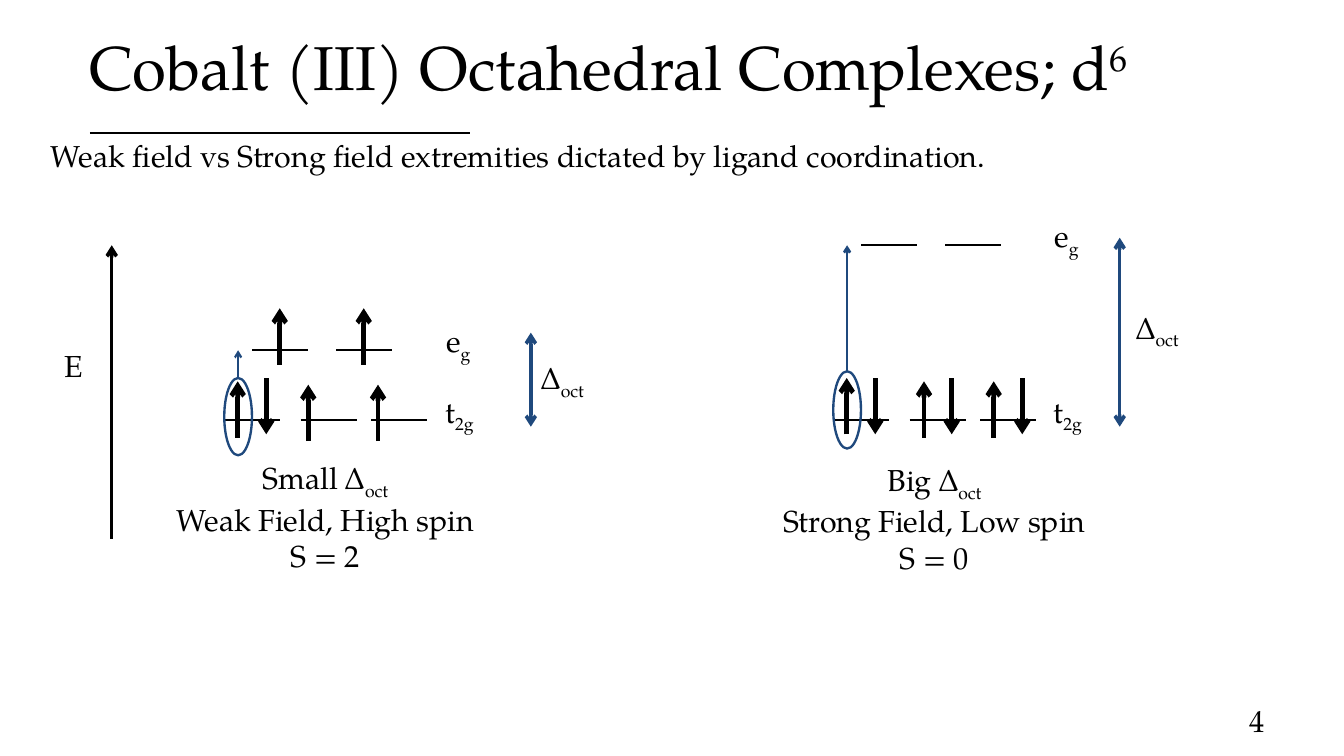
from lxml.etree import SubElement
from pptx import Presentation
from pptx.dml.color import RGBColor
from pptx.enum.shapes import MSO_CONNECTOR, MSO_SHAPE
from pptx.enum.text import MSO_ANCHOR, MSO_AUTO_SIZE, PP_ALIGN
from pptx.oxml.ns import qn
from pptx.util import Inches, Pt

COLORS = {"ink": "000000", "accent": "1F497D"}
FONT = "TeX Gyre Pagella"
BASELINES = {"_": "-25000", "^": "30000"}
ORBITAL_WIDTH = 0.665
SPIN_LENGTH = 0.67
T2G_LEVEL = 5


def write_text(frame, text, size=26, color="ink", align=PP_ALIGN.LEFT):
    """Fill a frame line by line; _ lowers and ^ raises the rest of a line."""
    for index, line in enumerate(text.split("\n")):
        para = frame.add_paragraph() if index else frame.paragraphs[0]
        para.alignment = align
        mark = next((sign for sign in BASELINES if sign in line), "_")
        body, _, script = line.partition(mark)
        for part, baseline in ((body, None), (script, BASELINES[mark])):
            if not part:
                continue
            span = para.add_run()
            span.text = part
            span.font.name = FONT
            span.font.size = Pt(size)
            span.font.color.rgb = RGBColor.from_string(COLORS[color])
            if baseline:
                span.font._element.set("baseline", baseline)


class OrbitalSlide:
    """Holds the page and draws each kind of element on it."""

    def __init__(self, deck):
        """Add a title-only page to the deck."""
        self.page = deck.slides.add_slide(deck.slide_layouts[5])

    def pad(self, frame):
        """Centre a frame vertically and widen its insets."""
        frame.vertical_anchor = MSO_ANCHOR.MIDDLE
        frame.margin_left = frame.margin_right = Inches(0.14)
        frame.margin_top = frame.margin_bottom = Inches(0.07)

    def title(self, text, left, top, width, height):
        """Place and format the title placeholder."""
        box = self.page.shapes.title
        box.left, box.top = Inches(left), Inches(top)
        box.width, box.height = Inches(width), Inches(height)
        frame = box.text_frame
        frame.auto_size = MSO_AUTO_SIZE.NONE
        self.pad(frame)
        write_text(frame, text, size=53)

    def text(self, text, left, top, width, height, wrap=True, **style):
        """Add a text box and return its frame."""
        box = self.page.shapes.add_textbox(
            Inches(left), Inches(top), Inches(width), Inches(height))
        frame = box.text_frame
        frame.word_wrap = wrap
        write_text(frame, text, **style)
        return frame

    def label(self, text, left, top, width):
        """Add a short centred label that does not wrap."""
        self.text(text, left, top, width, 0.54, wrap=False, align=PP_ALIGN.CENTER)

    def line(self, start, end, weight=2, color="ink", ends=()):
        """Add a straight line with arrowheads at the named ends."""
        link = self.page.shapes.add_connector(
            MSO_CONNECTOR.STRAIGHT, *(Inches(value) for value in (*start, *end)))
        link.line.width = Pt(weight)
        link.line.color.rgb = RGBColor.from_string(COLORS[color])
        for end_name in ends:
            SubElement(link.line._ln, qn(f"a:{end_name}")).set("type", "arrow")
        SubElement(link._element.spPr, qn("a:effectLst"))
        return link

    def orbitals(self, lefts, level):
        """Draw a row of orbitals at one energy level."""
        for left in lefts:
            self.line((left, level), (left + ORBITAL_WIDTH, level))

    def spin(self, center, top, up=True):
        """Draw one electron as a spin arrow."""
        high, low = (center, top), (center, top + SPIN_LENGTH)
        start, end = (low, high) if up else (high, low)
        self.line(start, end, weight=4, ends=["tailEnd"])

    def splitting(self, center, top, label_left, label_top):
        """Draw the double arrow and label of the energy gap."""
        self.line((center, top), (center, 5.08), 3, "accent", ["headEnd", "tailEnd"])
        self.label("Δ_oct", label_left, label_top, 0.76)

    def promotion(self, left, top, target, weight):
        """Circle an electron and point to the level it may reach."""
        ring = self.page.shapes.add_shape(
            MSO_SHAPE.OVAL, Inches(left), Inches(top), Inches(0.33), Inches(0.92))
        ring.shadow.inherit = False
        ring.fill.background()
        ring.line.width = Pt(2)
        ring.line.color.rgb = RGBColor.from_string(COLORS["accent"])
        center = left + 0.165
        jump = self.line((center, top), (center, target), weight, "accent", ["tailEnd"])
        jump.begin_connect(ring, 0)


def main():
    """Build and save the slide."""
    deck = Presentation()
    deck.slide_width, deck.slide_height = Inches(16), Inches(9)
    slide = OrbitalSlide(deck)
    slide.title("Cobalt (III) Octahedral Complexes; d^6", 0.92, 0.36, 15.08, 0.84)
    slide.line((1.07, 1.58), (5.6, 1.58), weight=1.5)
    slide.text("Weak field vs Strong field extremities dictated by ligand coordination.",
               0.5, 1.58, 15, 0.98)
    slide.pad(slide.text("4", 11.47, 8.34, 3.73, 0.48, align=PP_ALIGN.RIGHT))
    slide.line((1.33, 2.92), (1.33, 6.42), weight=3, ends=["headEnd"])
    slide.label("E", 0.67, 4.08, 0.42)

    slide.orbitals([2.67, 3.58, 4.42], T2G_LEVEL)
    slide.orbitals([3, 4], 4.17)
    slide.orbitals([9.92, 10.83, 11.67], T2G_LEVEL)
    slide.orbitals([10.25, 11.25], 2.92)

    spins_up = [(2.83, 4.54), (3.67, 4.58), (4.5, 4.58), (3.33, 3.67), (4.33, 3.67),
                (10.08, 4.5), (11, 4.54), (11.83, 4.54)]
    for center, top in spins_up:
        slide.spin(center, top)
    for center in (3.17, 10.42, 11.33, 12.17):
        slide.spin(center, 4.5, up=False)

    slide.splitting(6.32, 3.96, 6.32, 4.23)
    slide.splitting(13.33, 2.83, 13.4, 3.63)
    for left, eg_top in ((5.18, 3.79), (12.42, 2.54)):
        slide.label("t_2g", left, 4.63, 0.58)
        slide.label("e_g", left + 0.02, eg_top, 0.51)

    captions = [("Small Δ_oct\nWeak Field, High spin\nS = 2", 0.92, 5.42),
                ("Big Δ_oct\nStrong Field, Low spin\nS = 0", 8.17, 5.44)]
    for caption, left, top in captions:
        slide.text(caption, left, top, 5.91, 1.41, align=PP_ALIGN.CENTER)

    slide.promotion(2.67, 4.5, 4.17, 1.75)
    slide.promotion(9.92, 4.42, 2.92, 2)
    deck.save("out.pptx")


if __name__ == "__main__":
    main()
